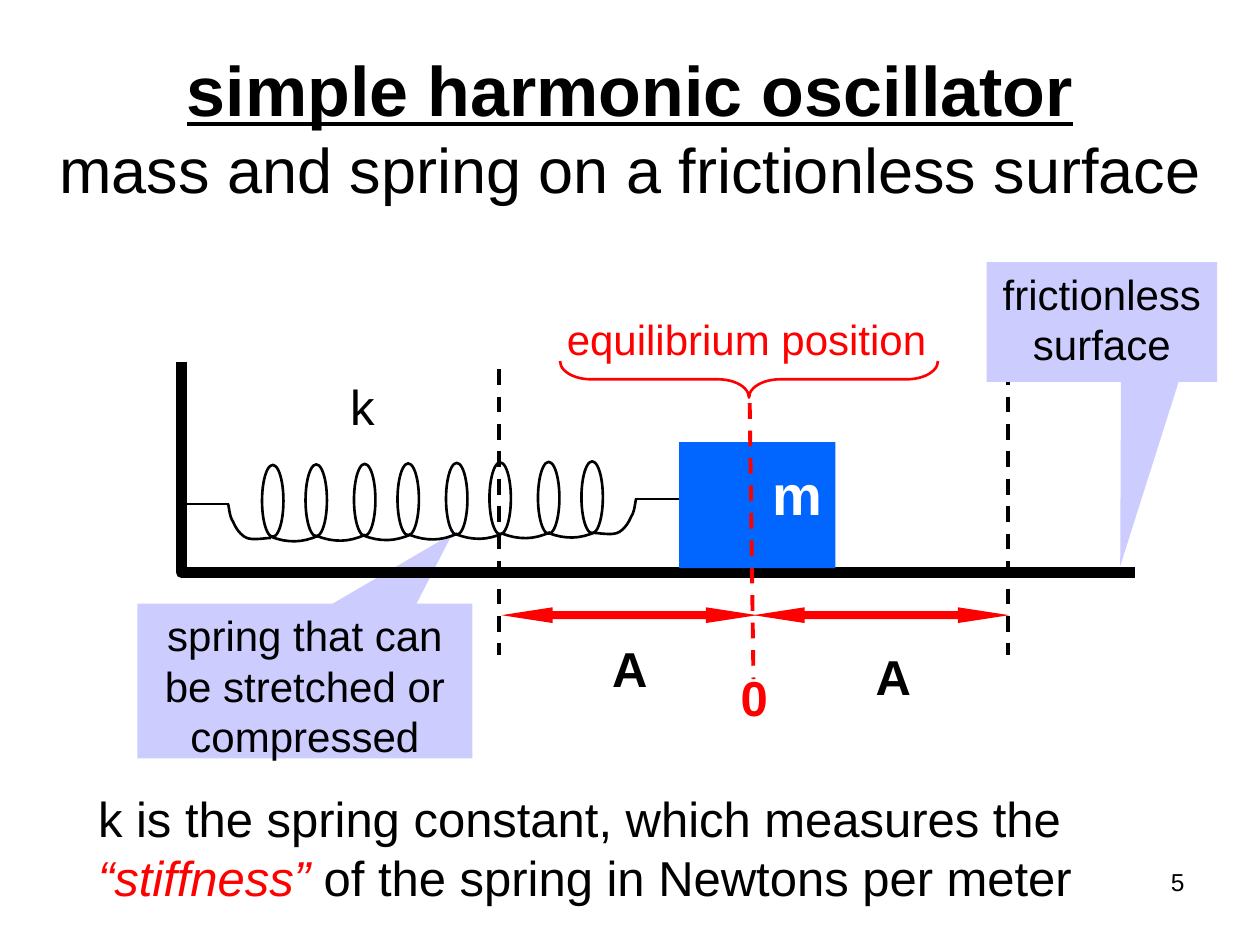
import pptx
import pptx.util
import pptx.dml.color
import pptx.enum.dml
import pptx.enum.shapes
import pptx.enum.text
import pptx.oxml.ns
from lxml import etree

SHAPE = pptx.enum.shapes.MSO_SHAPE
ALIGN = pptx.enum.text.PP_ALIGN
ANCHOR = pptx.enum.text.MSO_ANCHOR
BLACK, RED, WHITE, BLUE, LILAC = "000000", "FF0000", "FFFFFF", "0066FF", "CCCCFF"


def grid(cells):
    """Length of square cells: 100 columns by 75 rows fill the slide."""
    return pptx.util.Inches(cells / 10)


def color(hex_code):
    return pptx.dml.color.RGBColor.from_string(hex_code)


def format_runs(paragraph, size, ink=BLACK, bold=False, align=ALIGN.LEFT):
    paragraph.alignment = align
    for run in paragraph.runs:
        run.font.name = "Arial"
        run.font.size = pptx.util.Pt(size)
        run.font.bold = bold
        run.font.color.rgb = color(ink)


def format_line(item, ink, width, dashed=False):
    item.line.color.rgb = color(ink)
    item.line.width = pptx.util.Pt(width)
    if dashed:
        item.line.dash_style = pptx.enum.dml.MSO_LINE.DASH


def bezier(start, *controls, steps=8):
    """Points along joined cubic curves, three control points for each."""
    points = [start]
    for index in range(0, len(controls), 3):
        corners = [points[-1], *controls[index:index + 3]]
        for step in range(1, steps + 1):
            t = step / steps
            weights = ((1 - t) ** 3, 3 * t * (1 - t) ** 2, 3 * t * t * (1 - t), t ** 3)
            points.append(tuple(sum(weight * corner[axis] for weight, corner in zip(weights, corners))
                                for axis in (0, 1)))
    return points


class Region:
    """Draws parts at grid offsets from its own top left corner."""

    def __init__(self, slide, left, top):
        self.shapes, self.left, self.top = slide.shapes, left, top

    def point(self, x, y):
        return grid(self.left + x), grid(self.top + y)

    def shape(self, kind, x, y, width, height, fill=None, adjustments=()):
        shape = self.shapes.add_shape(kind, *self.point(x, y), grid(width), grid(height))
        shape.shadow.inherit = False
        for index, value in enumerate(adjustments):
            shape.adjustments[index] = value
        if fill:
            shape.fill.solid()
            shape.fill.fore_color.rgb = color(fill)
        else:
            shape.fill.background()
        shape.line.fill.background()
        return shape

    def line(self, start, end, ink=BLACK, width=1.5, dashed=False):
        connector = self.shapes.add_connector(
            pptx.enum.shapes.MSO_CONNECTOR.STRAIGHT, *self.point(*start), *self.point(*end))
        format_line(connector, ink, width, dashed)
        properties = connector._element.spPr
        etree.SubElement(properties, pptx.oxml.ns.qn("a:effectLst"))

    def outline(self, points, width=1.5):
        builder = self.shapes.build_freeform(*self.point(*points[0]), scale=1.0)
        builder.add_line_segments([self.point(*point) for point in points[1:]], close=False)
        shape = builder.convert_to_shape()
        shape.shadow.inherit = False
        shape.fill.background()
        format_line(shape, BLACK, width)

    def label(self, x, y, width, height, text, size=28, ink=BLACK, bold=False,
              wrap=False, align=ALIGN.LEFT):
        box = self.shapes.add_textbox(*self.point(x, y), grid(width), grid(height))
        box.text_frame.word_wrap = wrap
        box.text_frame.text = text
        for paragraph in box.text_frame.paragraphs:
            format_runs(paragraph, size, ink, bold, align)
        return box


def add_title(slide):
    title = slide.shapes.title
    title.left, title.top, title.width, title.height = grid(0), grid(1.6), grid(100), grid(16.8)
    frame = title.text_frame
    frame.auto_size = pptx.enum.text.MSO_AUTO_SIZE.NONE
    frame.vertical_anchor = ANCHOR.MIDDLE
    paragraph = frame.paragraphs[0]
    paragraph.text = "simple harmonic oscillator\vmass and spring on a frictionless surface"
    format_runs(paragraph, 36, align=ALIGN.CENTER)
    heading = paragraph.runs[0].font
    heading.size, heading.bold, heading.underline = pptx.util.Pt(40), True, True


def add_callout(slide, left, top, width, height, tip, text):
    callout = Region(slide, left, top).shape(
        SHAPE.RECTANGULAR_CALLOUT, 0, 0, width, height, LILAC, tip)
    frame = callout.text_frame
    frame.word_wrap = True
    frame.vertical_anchor = ANCHOR.TOP
    frame.text = text
    for paragraph in frame.paragraphs:
        format_runs(paragraph, 24, align=ALIGN.CENTER)


def add_amplitudes(slide, left, top):
    """Dashed limits of the motion with an arrow for each amplitude."""
    region = Region(slide, left, top)
    for x in (40.4, 0):
        region.line((x, 0), (x, 22.7), width=2.25, dashed=True)
    for x in (0.2, 20.2):
        region.shape(SHAPE.LEFT_RIGHT_ARROW, x, 18.9, 20.3, 1.25, RED, (0.5, 3.25))
    for x, y in ((28.9, 21.5), (8, 20.9)):
        region.label(x, y, 4.8, 5.7, "A", bold=True)


def add_spring(slide, left, top):
    """Eight coils joined by sagging arcs, rising slightly to the right."""
    region = Region(slide, left, top)
    coil_width, coil_height = 1.7, 5.7
    for index in range(8):
        pair, second = divmod(index, 2)
        region.shape(SHAPE.OVAL, 6.1 + 7.3 * pair + 3.45 * second, 0.3 - 0.04 * index,
                     coil_width, coil_height)
        format_line(region.shapes[-1], BLACK, 1.5)
    for index in range(7):
        x, y = 6.8 + 3.67 * index, 6 - 0.05 * index
        region.outline(bezier((x, y), (x + 1.3, y + 0.5), (x + 2.5, y + 0.5), (x + 3.8, y - 0.1)))
    hook = bezier((3.4, 3.4), (3.5, 3.6), (3.5, 4.4), (3.8, 4.8),
                  (4, 5.3), (4.4, 5.9), (4.9, 6.1), (5.4, 6.3), (6.4, 6.1), (6.8, 6.1))
    region.outline(hook)
    region.outline([(39.2 - x, y - 0.4) for x, y in hook])
    region.line((0, 3.4), (3.5, 3.4))
    region.line((35.7, 3), (39.2, 3))


def add_apparatus(slide, left, top):
    """Wall and floor, block, and the spring between them."""
    region = Region(slide, left, top)
    region.outline([(0, 0), (0, 16.75), (75.7, 16.75)], width=6)
    region.shape(SHAPE.RECTANGLE, 39.5, 6.4, 12.4, 10, BLUE)
    add_spring(slide, left + 0.3, top + 7.9)
    region.label(12.4, 0.7, 4, 5.7, "k")
    region.label(45.9, 7.3, 6, 6.4, "m", size=32, ink=WHITE, bold=True)


def add_equilibrium(slide, left, top):
    """Brace, dashed centre line and labels of the rest position."""
    region = Region(slide, left, top)
    region.line((15.5, 7.6), (15.8, 29.5), RED, 2.25, dashed=True)
    region.label(13.8, 28.1, 4.2, 5.7, "0", ink=RED, bold=True)
    region.label(0, 0, 30.6, 5, "equilibrium position", size=24, ink=RED)
    brace = region.shape(SHAPE.LEFT_BRACE, 14, -9.3, 2.9, 30, adjustments=(0.5, 0.5))
    brace.adjustments[0] = 0.85
    brace.rotation = 270
    format_line(brace, RED, 1.5)


def add_note(slide, left, top):
    """Meaning of the spring constant, and the slide number."""
    region = Region(slide, left, top)
    note = region.label(0, 0, 81.5, 10.4, "k is the spring constant, which measures the\n")
    paragraph = note.text_frame.paragraphs[1]
    for text in ("“stiffness” ", "of the spring in Newtons per meter"):
        paragraph.add_run().text = text
    format_runs(paragraph, 28)
    stress = paragraph.runs[0].font
    stress.italic, stress.color.rgb = True, color(RED)
    region.label(64.9, 6.2, 23.3, 5.2, "5", size=14, wrap=True, align=ALIGN.RIGHT)


def main():
    presentation = pptx.Presentation()
    presentation.slide_width, presentation.slide_height = grid(100), grid(75)
    slide = presentation.slides.add_slide(presentation.slide_layouts[5])
    add_title(slide)
    add_callout(slide, 10.9, 47.9, 26.6, 12.3, (0.44, -0.95),
                "spring that can be stretched or compressed")
    add_amplitudes(slide, 39.6, 29.3)
    add_apparatus(slide, 14.4, 28.7)
    add_equilibrium(slide, 44, 24.4)
    add_note(slide, 6.8, 62.1)
    add_callout(slide, 78.3, 20.8, 18.3, 9.5, (0.08, 2.04), "frictionless\nsurface")
    presentation.save("out.pptx")


if __name__ == "__main__":
    main()
